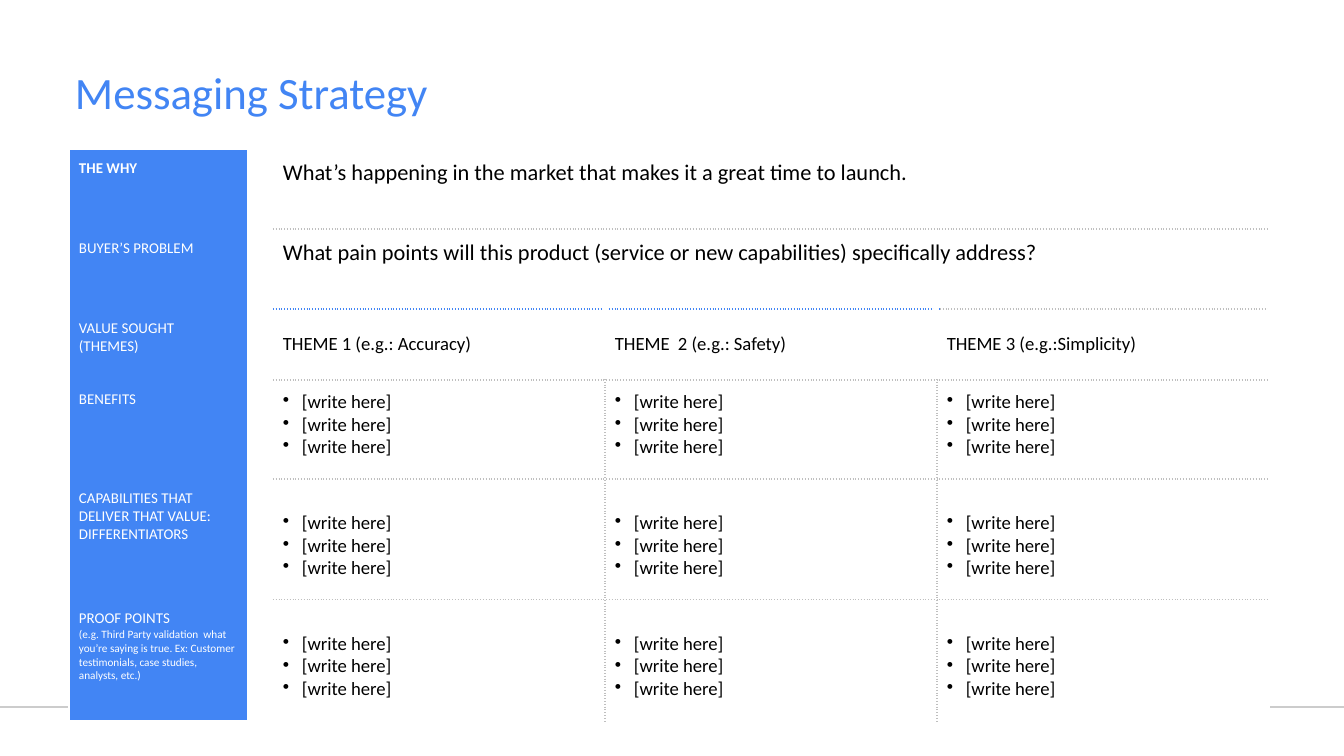
"""Build the messaging strategy slide: a title above a grid of themes."""
import pptx
import pptx.dml.color
import pptx.enum.shapes
import pptx.enum.text
import pptx.oxml
import pptx.oxml.ns
import pptx.util

BLUE, WHITE, BLACK, GREY, RULE = "4285F4", "FFFFFF", "000000", "BFBFBF", "CCCCCC"
FONT = "Calibri"
TITLE = "Messaging Strategy"
LABELS = [
    ["THE WHY"],
    ["BUYER’S PROBLEM"],
    ["VALUE SOUGHT (THEMES)"],
    ["BENEFITS"],
    ["CAPABILITIES THAT DELIVER THAT VALUE: DIFFERENTIATORS"],
    ["PROOF POINTS",
     "(e.g. Third Party validation  what you’re saying is true. "
     "Ex: Customer testimonials, case studies, analysts, etc.)"],
]
STATEMENTS = [
    "What’s happening in the market that makes it a great time to launch.",
    "What pain points will this product (service or new capabilities) specifically address?",
]
THEMES = ["THEME 1 (e.g.: Accuracy)", "THEME  2 (e.g.: Safety)", "THEME 3 (e.g.:Simplicity)"]
BULLETS = ["[write here]"] * 3

COLS = [178, 26, 332, 332, 332]
ROWS = [80, 80, 67, 98, 121, 120]
LEFT, TOP = 69, 149
THEME_ROW, FIRST_COL = 2, 2
PAD, PAD_BOTTOM, PAD_LOW, INDENT = 11, 20, 33, 19


def px(n):
    return pptx.util.Emu(round(n * 914400 / 134.4))


def rgb(color):
    return pptx.dml.color.RGBColor.from_string(color)


def write(tf, lines, size, color, bold=False):
    tf.text = "\n".join(lines)
    for p in tf.paragraphs:
        for r in p.runs:
            r.font.name, r.font.size, r.font.bold = FONT, pptx.util.Pt(size), bold
            r.font.color.rgb = rgb(color)


def add_bullet(p):
    pPr = p._p.get_or_add_pPr()
    pPr.set("marL", str(px(INDENT)))
    pPr.set("indent", str(-px(INDENT)))
    color = pptx.oxml.parse_xml(
        f'<a:buClr {pptx.oxml.ns.nsdecls("a")}><a:srgbClr val="{BLACK}"/></a:buClr>')
    char = pptx.oxml.parse_xml(f'<a:buChar {pptx.oxml.ns.nsdecls("a")} char="•"/>')
    pPr.extend([color, char])


def horizontal_edge(row, col):
    if row in (0, len(ROWS)):
        return WHITE, 1, "solid"
    if col < FIRST_COL:
        return None
    themed = row == THEME_ROW and col < len(COLS) - 1
    return BLUE if themed else GREY, 1, "sysDot"


def vertical_edge(row, col):
    if col in (0, len(COLS)):
        return WHITE, 1, "solid"
    if col <= FIRST_COL or row < THEME_ROW:
        return None
    return (WHITE, 3, "solid") if row == THEME_ROW else (GREY, 1, "sysDot")


def add_borders(cell, row, col):
    edges = {"L": vertical_edge(row, col), "R": vertical_edge(row, col + 1),
             "T": horizontal_edge(row, col), "B": horizontal_edge(row + 1, col)}
    tcPr = cell._tc.get_or_add_tcPr()
    for side, edge in edges.items():
        if edge:
            color, width, dash = edge
            tcPr.append(pptx.oxml.parse_xml(
                f'<a:ln{side} {pptx.oxml.ns.nsdecls("a")} w="{pptx.util.Pt(width)}">'
                f'<a:solidFill><a:srgbClr val="{color}"/></a:solidFill>'
                f'<a:prstDash val="{dash}"/></a:ln{side}>'))


def fill_content(cell, row, col):
    if row < THEME_ROW:
        if col == FIRST_COL:
            write(cell.text_frame, [STATEMENTS[row]], 12, BLACK)
    elif row == THEME_ROW:
        write(cell.text_frame, [THEMES[col - FIRST_COL]], 10, BLACK)
        cell.vertical_anchor = pptx.enum.text.MSO_ANCHOR.MIDDLE
        cell.margin_bottom = px(PAD)
    else:
        write(cell.text_frame, BULLETS, 10, BLACK)
        cell.margin_top = px(PAD if row == THEME_ROW + 1 else PAD_LOW)
        for p in cell.text_frame.paragraphs:
            add_bullet(p)


def add_title(s):
    sp = s.shapes.title
    sp.left, sp.top, sp.width, sp.height = px(75), px(69), px(1193), px(51)
    tf = sp.text_frame
    write(tf, [TITLE], 24, BLUE)
    tf.margin_left = tf.margin_right = tf.margin_top = tf.margin_bottom = 0
    tf.vertical_anchor = pptx.enum.text.MSO_ANCHOR.MIDDLE
    tf.paragraphs[0].alignment = pptx.enum.text.PP_ALIGN.LEFT
    tf.paragraphs[0].line_spacing = 0.9


def add_footer_rule(s):
    line = s.shapes.add_connector(
        pptx.enum.shapes.MSO_CONNECTOR.STRAIGHT, px(0), px(707), px(1344), px(707))
    line.line.color.rgb, line.line.width = rgb(RULE), pptx.util.Pt(0.75)
    line._element.spPr.append(
        pptx.oxml.parse_xml(f'<a:effectLst {pptx.oxml.ns.nsdecls("a")}/>'))


def add_grid(s):
    frame = s.shapes.add_table(
        len(ROWS), len(COLS), px(LEFT), px(TOP), px(sum(COLS)), px(sum(ROWS)))
    table = frame.table
    table.first_row = table.horz_banding = False
    style = table._tbl.tblPr.find(pptx.oxml.ns.qn("a:tableStyleId"))
    style.text = "{2D5ABB26-0587-4C30-8999-92F81FD0307C}"
    for column, width in zip(table.columns, COLS):
        column.width = px(width)
    for row, height in zip(table.rows, ROWS):
        row.height = px(height)
    for row in range(THEME_ROW):
        table.cell(row, FIRST_COL).merge(table.cell(row, len(COLS) - 1))
    for row in range(len(ROWS)):
        for col in range(len(COLS)):
            cell = table.cell(row, col)
            cell.margin_left = cell.margin_right = cell.margin_top = px(PAD - 1)
            cell.margin_bottom = px(PAD_BOTTOM)
            add_borders(cell, row, col)
            cell.fill.solid()
            cell.fill.fore_color.rgb = rgb(WHITE if col else BLUE)
            if col == 0:
                write(cell.text_frame, LABELS[row], 8, WHITE, bold=row == 0)
                for p in cell.text_frame.paragraphs[1:]:
                    p.runs[0].font.size = pptx.util.Pt(6)
            elif col >= FIRST_COL:
                fill_content(cell, row, col)


def main():
    prs = pptx.Presentation()
    prs.slide_width, prs.slide_height = px(1344), px(756)
    s = prs.slides.add_slide(prs.slide_layouts[5])
    add_footer_rule(s)
    add_title(s)
    add_grid(s)
    prs.save("out.pptx")


if __name__ == "__main__":
    main()
